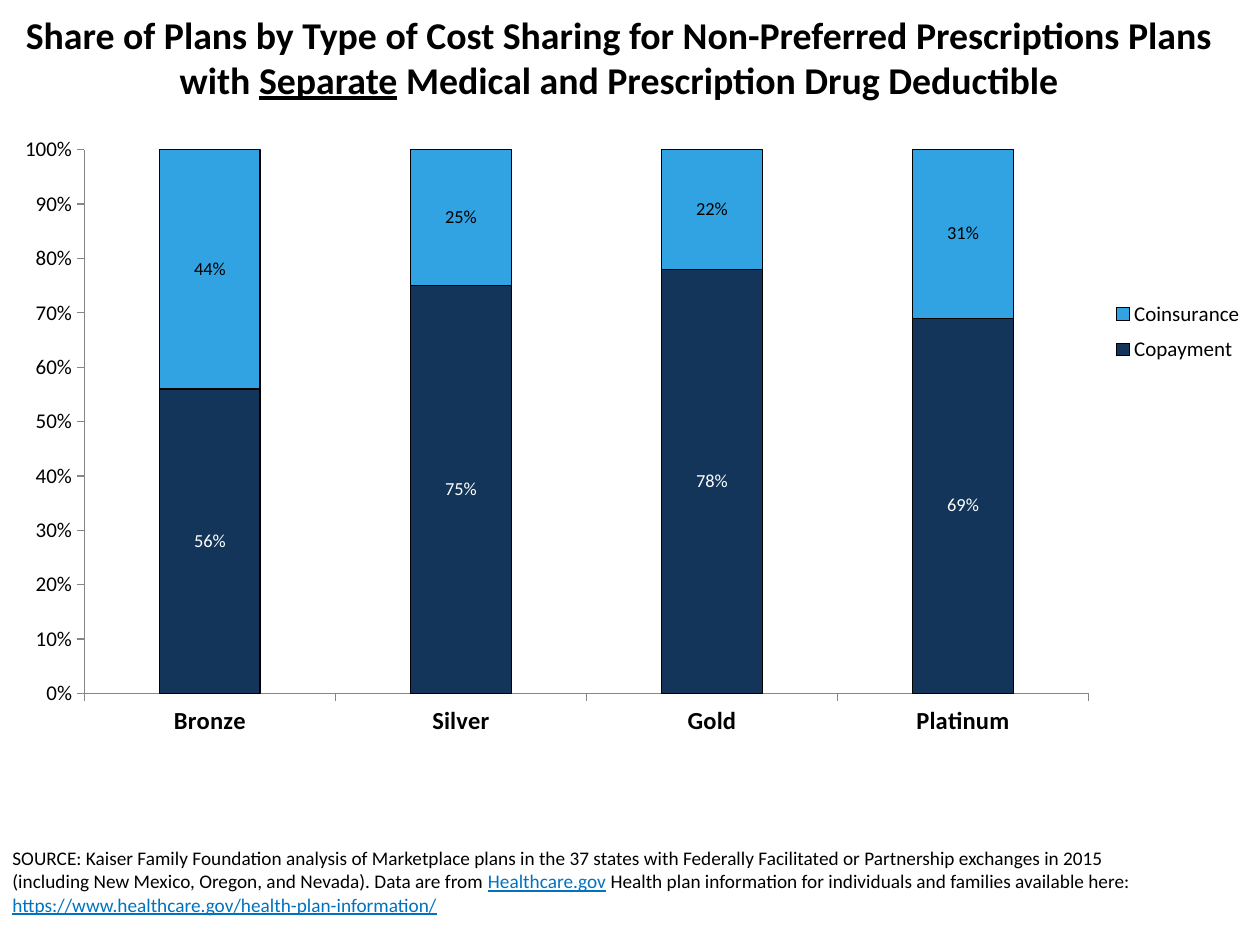
from lxml import etree
from pptx import Presentation
from pptx import util as u
from pptx.chart.data import CategoryChartData
from pptx.dml.color import RGBColor
from pptx.enum import chart as c, text
from pptx.oxml import ns

FONT = "Calibri"
COLORS = {"black": "000000", "white": "FFFFFF", "link": "0072C0",
          "navy": "133559", "sky": "31A3E3", "axis": "868686"}

TITLE = [
    ("Share of Plans by Type of Cost Sharing for Non-Preferred Prescriptions Plans with ", False),
    ("Separate", True),
    (" Medical and Prescription Drug Deductible", False),
]
SOURCE = [
    ("SOURCE: Kaiser Family Foundation analysis of Marketplace plans in the 37 states with "
     "Federally Facilitated or Partnership exchanges in 2015 (including New Mexico, Oregon, "
     "and Nevada). Data are from ", False),
    ("Healthcare.gov", True),
    (" Health plan information for individuals and families available here: ", False),
    ("https://www.healthcare.gov/health-plan-information/", True),
]
TIERS = ["Bronze", "Silver", "Gold", "Platinum"]
SERIES = [
    ("Copayment", [0.56, 0.75, 0.78, 0.69], "navy", "white"),
    ("Coinsurance", [0.44, 0.25, 0.22, 0.31], "sky", "black"),
]
PLOT_AREA = {"x": 0.067, "y": 0.038, "w": 0.797, "h": 0.872}
LEGEND_AREA = {"x": 0.875, "y": 0.265, "w": 0.12, "h": 0.13}


def color(name):
    return RGBColor.from_string(COLORS[name])


def style(font, size, name="black", bold=False):
    font.name, font.size, font.bold = FONT, u.Pt(size), bold
    font.color.rgb = color(name)


def add_text(slide, box, runs, size, underline_color, bold=False, align=text.PP_ALIGN.LEFT):
    frame = slide.shapes.add_textbox(*map(u.Inches, box)).text_frame
    frame.word_wrap = True
    paragraph = frame.paragraphs[0]
    paragraph.alignment = align
    for words, underlined in runs:
        run = paragraph.add_run()
        run.text = words
        style(run.font, size, underline_color if underlined else "black", bold)
        run.font.underline = underlined


def set_layout(parent, area, before, inner=False):
    for old in parent.findall(ns.qn("c:layout")):
        parent.remove(old)
    layout = etree.Element(ns.qn("c:layout"))
    manual = etree.SubElement(layout, ns.qn("c:manualLayout"))
    values = {"layoutTarget": "inner"} if inner else {}
    values.update(xMode="edge", yMode="edge", **area)
    for tag, value in values.items():
        etree.SubElement(manual, ns.qn(f"c:{tag}")).set("val", str(value))
    parent.find(ns.qn(before)).addprevious(layout)


def add_cost_chart(slide):
    data = CategoryChartData(number_format="0%")
    data.categories = TIERS
    for name, values, _, _ in SERIES:
        data.add_series(name, values)
    chart = slide.shapes.add_chart(c.XL_CHART_TYPE.COLUMN_STACKED_100,
                                   *map(u.Inches, (0, 1, 10, 4.95)), data).chart
    chart.has_title = False
    style(chart.font, 12)

    plot = chart.plots[0]
    plot.gap_width, plot.overlap, plot.vary_by_categories = 150, 100, False
    for series, (_, _, fill, label_color) in zip(plot.series, SERIES):
        series.format.fill.solid()
        series.format.fill.fore_color.rgb = color(fill)
        series.format.line.color.rgb = color("black")
        series.format.line.width = u.Pt(0.75)
        labels = series.data_labels
        labels.show_value = True
        labels.number_format, labels.number_format_is_linked = "0%", False
        labels.position = c.XL_LABEL_POSITION.CENTER
        style(labels.font, 10.5, label_color)

    for axis, size, bold in ((chart.category_axis, 14, True), (chart.value_axis, 12, False)):
        axis.has_major_gridlines = False
        axis.major_tick_mark = c.XL_TICK_MARK.OUTSIDE
        axis.minor_tick_mark = c.XL_TICK_MARK.NONE
        axis.format.line.color.rgb = color("axis")
        axis.format.line.width = u.Pt(0.75)
        style(axis.tick_labels.font, size, bold=bold)
    value_axis = chart.value_axis
    value_axis.minimum_scale, value_axis.maximum_scale, value_axis.major_unit = 0, 1, 0.1
    value_axis.tick_labels.number_format = "0%"
    value_axis.tick_labels.number_format_is_linked = False

    chart.has_legend = True
    legend = chart.legend
    legend.position = c.XL_LEGEND_POSITION.RIGHT
    legend.include_in_layout = False
    style(legend.font, 12)
    plot_area = chart.element.find(".//" + ns.qn("c:plotArea"))
    set_layout(plot_area, PLOT_AREA, "c:barChart", inner=True)
    set_layout(chart.element.find(".//" + ns.qn("c:legend")), LEGEND_AREA, "c:overlay")


def main():
    presentation = Presentation()
    presentation.slide_width, presentation.slide_height = u.Inches(10), u.Inches(7.5)
    slide = presentation.slides.add_slide(presentation.slide_layouts[6])
    add_text(slide, (0, 6.67, 9.25, 0.84), SOURCE, 11, "link")
    add_text(slide, (0, 0.04, 9.83, 1.25), TITLE, 21.6, "black", True, text.PP_ALIGN.CENTER)
    add_cost_chart(slide)
    presentation.save("out.pptx")


if __name__ == "__main__":
    main()
